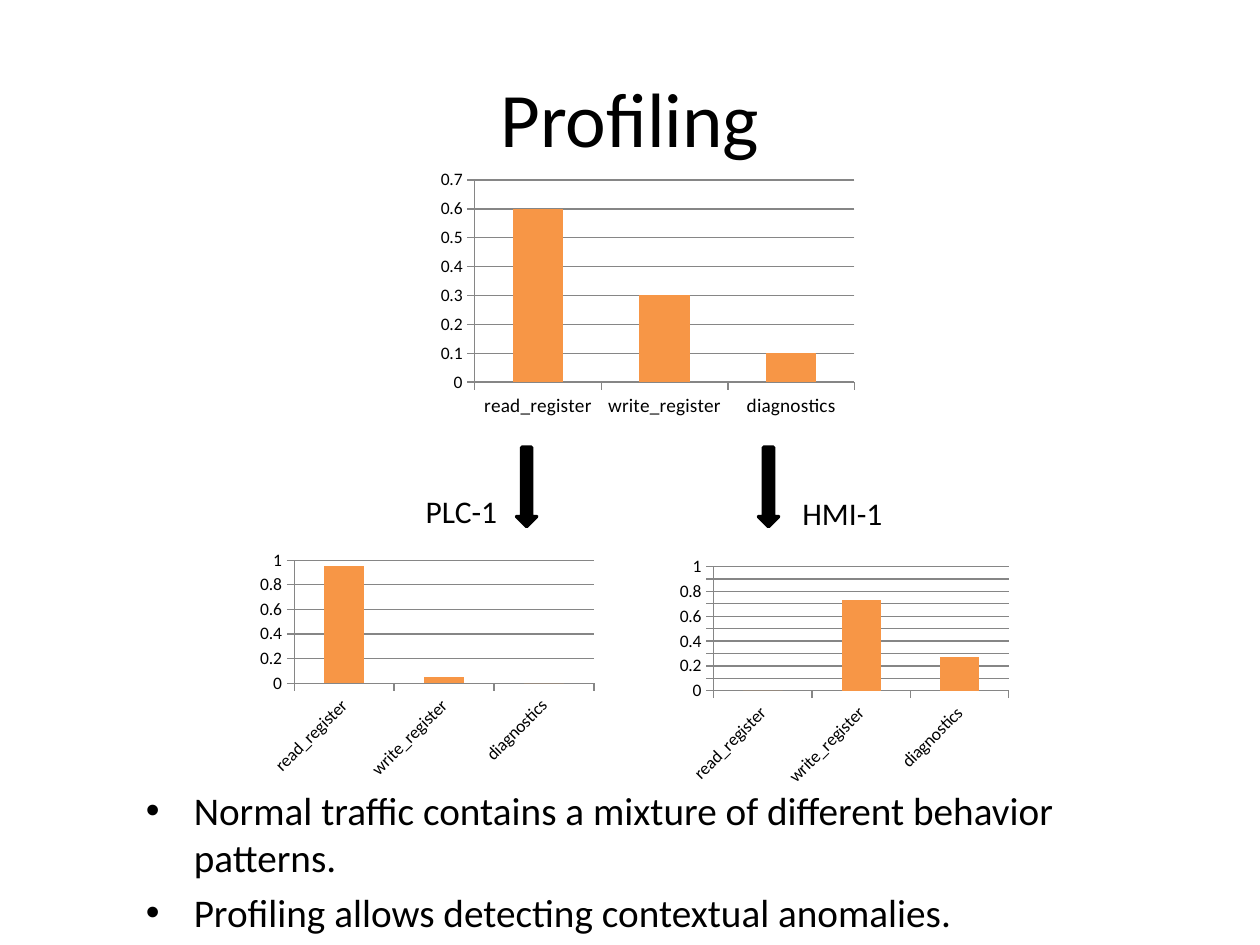
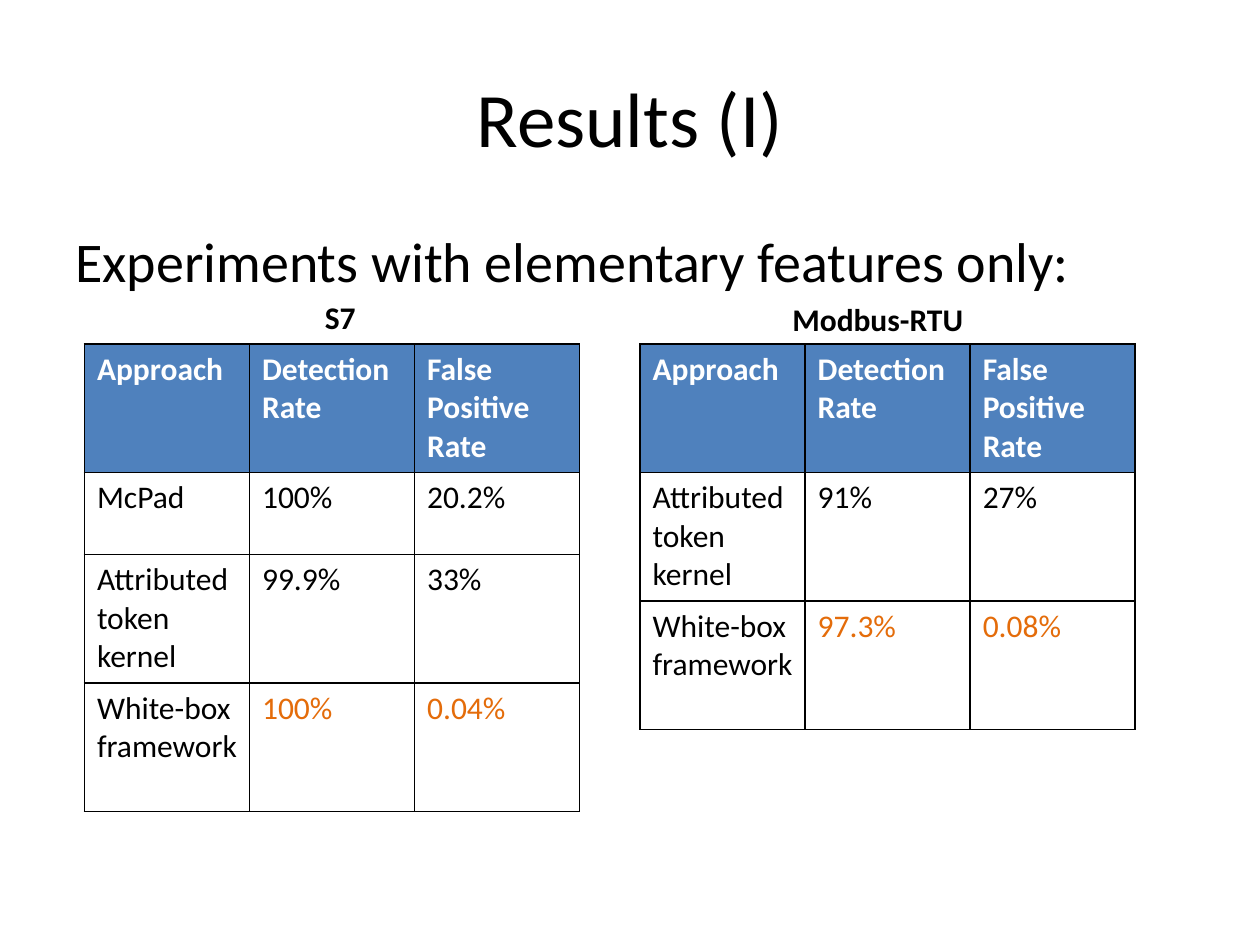
from dataclasses import dataclass

from lxml import etree
from pptx import Presentation
from pptx.chart.data import CategoryChartData
from pptx.dml.color import RGBColor
from pptx.enum.chart import XL_CHART_TYPE, XL_TICK_MARK
from pptx.enum.shapes import MSO_SHAPE
from pptx.enum.text import MSO_ANCHOR, MSO_AUTO_SIZE, PP_ALIGN
from pptx.oxml.ns import qn
from pptx.util import Pt

COLUMNS = XL_CHART_TYPE.COLUMN_CLUSTERED
TICK_OUT, TICK_NONE = XL_TICK_MARK.OUTSIDE, XL_TICK_MARK.NONE
DOWN_ARROW = MSO_SHAPE.DOWN_ARROW
TOP, MIDDLE = MSO_ANCHOR.TOP, MSO_ANCHOR.MIDDLE
FIT_SHAPE, FIT_NONE = MSO_AUTO_SIZE.SHAPE_TO_FIT_TEXT, MSO_AUTO_SIZE.NONE
LEFT, CENTER = PP_ALIGN.LEFT, PP_ALIGN.CENTER

PX = 9144
FONT = "Calibri"
BLACK = RGBColor(0x00, 0x00, 0x00)
WHITE = RGBColor(0xFF, 0xFF, 0xFF)
BLUE = RGBColor(0x4F, 0x81, 0xBD)
BAR_ORANGE = RGBColor(0xF7, 0x96, 0x46)
BEST_ORANGE = RGBColor(0xE4, 0x6C, 0x0A)
GRAY = RGBColor(0x86, 0x86, 0x86)

CATEGORIES = ("read_register", "write_register", "diagnostics")
HEADER = ("Approach", "Detection Rate", "False Positive Rate")
COL_W, HEADER_H, TABLE_Y = 131, 102, 273


@dataclass(frozen=True)
class Box:
    x: int
    y: int
    w: int
    h: int

    def emu(self) -> tuple[int, int, int, int]:
        return self.x * PX, self.y * PX, self.w * PX, self.h * PX


@dataclass(frozen=True)
class Profile:
    box: Box
    values: tuple[float, ...]
    top: float
    step: float
    category_size: int = 10


@dataclass(frozen=True)
class Label:
    text: str
    box: Box
    bold: bool = False


@dataclass(frozen=True)
class Row:
    cells: tuple[str, str, str]
    height: int = 102


@dataclass(frozen=True)
class Results:
    x: int
    rows: tuple[Row, ...]


PROFILES = (
    Profile(Box(534, 438, 272, 190), (0, 0.73, 0.27), 1, 0.1),
    Profile(Box(201, 433, 276, 189), (0.95, 0.05, 0), 1, 0.2),
    Profile(Box(343, 131, 342, 205), (0.6, 0.3, 0.1), 0.7, 0.1, 11),
)
ARROWS = (Box(410, 355, 16, 63), Box(602, 355, 16, 63))
DEVICES = (
    Label("PLC-1", Box(328, 386, 78, 40)),
    Label("HMI-1", Box(627, 387, 84, 40)),
)
FINDINGS = (
    "Normal traffic contains a mixture of different behavior patterns.",
    "Profiling allows detecting contextual anomalies.",
)
RESULTS = (
    Results(67, (
        Row(("McPad", "100%", "20.2%"), 65),
        Row(("Attributed token kernel", "99.9%", "33%")),
        Row(("White-box framework", "100%", "0.04%")),
    )),
    Results(508, (
        Row(("Attributed token kernel", "91%", "27%")),
        Row(("White-box framework", "97.3%", "0.08%")),
    )),
)
PROTOCOLS = (
    Label("Modbus-RTU", Box(619, 233, 157, 40), True),
    Label("S7", Box(248, 232, 45, 40), True),
)


def write(tf, *lines: str, size: float = 18, color: RGBColor = BLACK,
          bold: bool = False, align=LEFT, bullet: bool = False) -> None:
    for i, line in enumerate(lines):
        p = tf.add_paragraph() if i else tf.paragraphs[0]
        p.alignment = align
        if i:
            p.space_before = Pt(round(size * 0.2, 1))
        if bullet:
            p_pr = p._p.get_or_add_pPr()
            p_pr.set("marL", str(38 * PX))
            p_pr.set("indent", str(-38 * PX))
            etree.SubElement(p_pr, qn("a:buFont")).set("typeface", "Arial")
            etree.SubElement(p_pr, qn("a:buChar")).set("char", "•")
        r = p.add_run()
        r.text = line
        r.font.name = FONT
        r.font.size = Pt(size)
        r.font.bold = bold
        r.font.color.rgb = color


def add_text(s, box: Box, *lines: str, wrap: bool = True, anchor=TOP, **style) -> None:
    tf = s.shapes.add_textbox(*box.emu()).text_frame
    tf.word_wrap = wrap
    tf.auto_size = FIT_NONE if wrap else FIT_SHAPE
    tf.vertical_anchor = anchor
    write(tf, *lines, **style)


def add_slide(prs, title: str):
    s = prs.slides.add_slide(prs.slide_layouts[6])
    add_text(s, Box(50, 30, 900, 125), title, anchor=MIDDLE, size=44, align=CENTER)
    return s


def add_label(s, label: Label) -> None:
    add_text(s, label.box, label.text, wrap=False, bold=label.bold)


def add_profile(s, profile: Profile) -> None:
    data = CategoryChartData()
    data.categories = CATEGORIES
    data.add_series("Series 1", profile.values)
    chart = s.shapes.add_chart(COLUMNS, *profile.box.emu(), data).chart
    chart.has_legend = False
    chart.has_title = False
    chart.font.name = FONT
    chart.font.size = Pt(10)
    chart.font.color.rgb = BLACK

    plot = chart.plots[0]
    plot.gap_width = 150
    plot.vary_by_categories = False
    fill = plot.series[0].format.fill
    fill.solid()
    fill.fore_color.rgb = BAR_ORANGE

    for axis in (chart.category_axis, chart.value_axis):
        axis.major_tick_mark = TICK_OUT
        axis.minor_tick_mark = TICK_NONE
        axis.format.line.color.rgb = GRAY
    chart.category_axis.tick_labels.font.size = Pt(profile.category_size)

    values = chart.value_axis
    values.minimum_scale = 0
    values.maximum_scale = profile.top
    values.major_unit = profile.step
    values.has_major_gridlines = True
    values.major_gridlines.format.line.color.rgb = GRAY
    values.tick_labels.number_format = "General"
    values.tick_labels.number_format_is_linked = False


def add_arrow(s, box: Box) -> None:
    sp = s.shapes.add_shape(DOWN_ARROW, *box.emu())
    sp.shadow.inherit = False
    sp.fill.solid()
    sp.fill.fore_color.rgb = BLACK
    sp.line.color.rgb = BLACK
    sp.line.width = Pt(2)


def add_borders(cell) -> None:
    tc_pr = cell._tc.get_or_add_tcPr()
    for i, side in enumerate(("lnL", "lnR", "lnT", "lnB")):
        ln = etree.Element(qn(f"a:{side}"), w=str(Pt(1)))
        fill = etree.SubElement(ln, qn("a:solidFill"))
        etree.SubElement(fill, qn("a:srgbClr")).set("val", str(BLACK))
        tc_pr.insert(i, ln)


def add_results(s, results: Results) -> None:
    rows = (Row(HEADER, HEADER_H), *results.rows)
    box = Box(results.x, TABLE_Y, COL_W * len(HEADER), sum(row.height for row in rows))
    table = s.shapes.add_table(len(rows), len(HEADER), *box.emu()).table
    table.horz_banding = False
    for column in table.columns:
        column.width = COL_W * PX
    for i, row in enumerate(rows):
        table.rows[i].height = row.height * PX
        for j, value in enumerate(row.cells):
            cell = table.cell(i, j)
            color = BLACK
            if i == 0:
                cell.fill.solid()
                cell.fill.fore_color.rgb = BLUE
                color = WHITE
            else:
                cell.fill.background()
                if i == len(rows) - 1 and j:
                    color = BEST_ORANGE
            write(cell.text_frame, value, color=color, bold=i == 0)
            add_borders(cell)


def build_profiling(prs) -> None:
    s = add_slide(prs, "Profiling")
    add_text(s, Box(106, 619, 843, 107), *FINDINGS, size=22.4, bullet=True)
    for profile in PROFILES:
        add_profile(s, profile)
    for arrow in ARROWS:
        add_arrow(s, arrow)
    for device in DEVICES:
        add_label(s, device)


def build_results(prs) -> None:
    s = add_slide(prs, "Results (I)")
    add_text(s, Box(50, 175, 900, 495), "Experiments with elementary features only:", size=32)
    for results in RESULTS:
        add_results(s, results)
    for protocol in PROTOCOLS:
        add_label(s, protocol)


def main() -> None:
    prs = Presentation()
    prs.slide_width = 1000 * PX
    prs.slide_height = 750 * PX
    build_profiling(prs)
    build_results(prs)
    prs.save("out.pptx")


if __name__ == "__main__":
    main()
